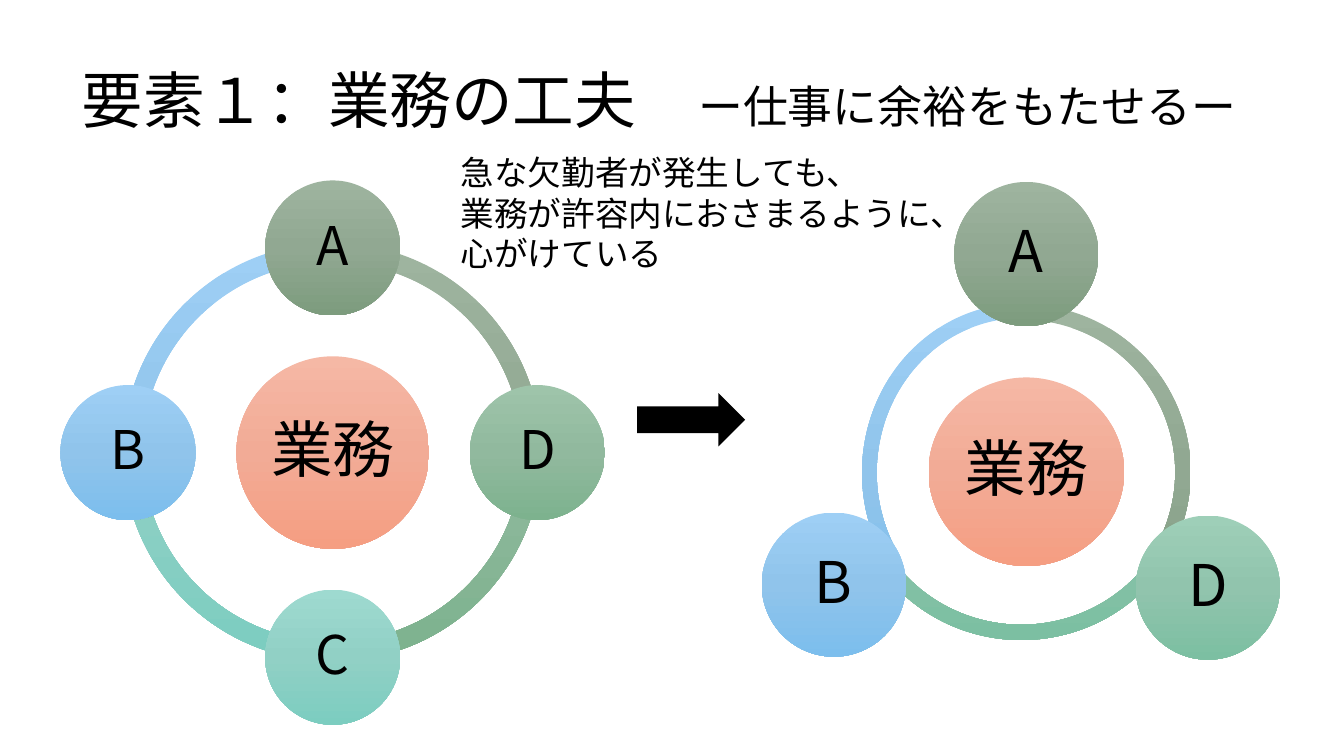
from copy import deepcopy
from math import cos, radians, sin

from lxml import etree
from pptx import Presentation
from pptx.dml.color import RGBColor
from pptx.enum.shapes import MSO_SHAPE as Shape
from pptx.enum.text import MSO_ANCHOR as Anchor, MSO_AUTO_SIZE as AutoSize, PP_ALIGN as Align
from pptx.oxml.ns import qn
from pptx.util import Inches, Pt

FONT = "Noto Sans CJK JP"

# Gradients from top to bottom
CORAL = ("F5B8A5", "F2AB96", "F59E82")
OLIVE = ("9EB49F", "91A892", "7D9C7E")
GREEN = ("9EC4AA", "91B99E", "7DB28E")
MINT = ("9ECFB8", "91C4AD", "7CBFA2")
TEAL = ("9EDAD0", "91D0C5", "7CCDC0")
BLUE = ("9ECFF5", "90C4EB", "7CBEED")


def color(hex_text):
    return RGBColor.from_string(hex_text)


def style_run(span, size, latin=FONT):
    span.font.size = Pt(size)
    span.font.name = latin
    span.font.color.rgb = color("000000")
    east_asian = etree.SubElement(span.font._element, qn("a:ea"))
    east_asian.set("typeface", FONT)


def add_plain_shape(page, kind, left, top, width, height):
    shape = page.shapes.add_shape(kind, Inches(left), Inches(top), Inches(width), Inches(height))
    shape.shadow.inherit = False
    shape.line.fill.background()
    return shape


def fill_gradient(shape, colors):
    shape.fill.gradient()
    shape.fill.gradient_angle = 270
    # A new gradient has two stops; the third is added here
    stop_list = shape._element.spPr.find(qn("a:gradFill")).find(qn("a:gsLst"))
    stop_list.append(deepcopy(stop_list[-1]))
    for stop, position, shade in zip(shape.fill.gradient_stops, (0, 0.5, 1), colors):
        stop.position = position
        stop.color.rgb = color(shade)


def add_arc(page, box, start, end, colors):
    """Ring segment running clockwise between two angles in degrees."""
    arc = add_plain_shape(page, Shape.BLOCK_ARC, *box)
    arc.adjustments[0] = start * 0.6
    arc.adjustments[1] = end * 0.6
    arc.adjustments[2] = 0.046
    fill_gradient(arc, colors)


def add_circle(page, label, center_x, center_y, width, height, size, colors):
    circle = add_plain_shape(page, Shape.OVAL, center_x - width / 2, center_y - height / 2,
                             width, height)
    fill_gradient(circle, colors)
    frame = circle.text_frame
    frame.margin_left = frame.margin_right = frame.margin_top = frame.margin_bottom = Inches(0.05)
    frame.word_wrap = False
    frame.vertical_anchor = Anchor.MIDDLE
    frame.text = label
    para = frame.paragraphs[0]
    para.alignment = Align.CENTER
    para.line_spacing = 0.9
    style_run(para.runs[0], size)


def add_title(page, parts):
    title = page.shapes.title
    title.left, title.top = Inches(0.71), Inches(0.26)
    title.width, title.height = Inches(11.98), Inches(1.53)
    frame = title.text_frame
    frame.auto_size = AutoSize.NONE
    frame.vertical_anchor = Anchor.MIDDLE
    para = frame.paragraphs[0]
    para.alignment = Align.LEFT
    para.line_spacing = 0.9
    for text, size in parts:
        span = para.add_run()
        span.text = text
        style_run(span, size, "Arial")


def add_note(page, lines):
    box = page.shapes.add_textbox(Inches(4.47), Inches(1.46), Inches(5.25), Inches(1.31))
    frame = box.text_frame
    frame.word_wrap = False
    frame.text = "\n".join(lines)
    for para in frame.paragraphs:
        style_run(para.runs[0], 24)


def add_four_person_ring(page):
    center_x, center_y, radius = 3.3, 4.49, 2.03
    members = [("A", 270, OLIVE), ("D", 0, GREEN), ("C", 90, TEAL), ("B", 180, BLUE)]
    for _, angle, colors in reversed(members):
        add_arc(page, (1.22, 2.41, 4.15, 4.15), angle, (angle + 90) % 360, colors)
    add_circle(page, "業務", center_x, center_y, 1.91, 1.91, 44, CORAL)
    for label, angle, colors in members:
        add_circle(page, label, center_x + radius * cos(radians(angle)),
                   center_y + radius * sin(radians(angle)), 1.34, 1.34, 38, colors)


def add_three_person_ring(page):
    add_arc(page, (8.55, 3.01, 3.17, 3.36), 148.95, 271.27, BLUE)
    add_arc(page, (8.43, 3.05, 3.4, 3.3), 31.58, 149.28, MINT)
    add_arc(page, (8.48, 3.02, 3.33, 3.33), 270.93, 31.91, OLIVE)
    add_circle(page, "業務", 10.18, 4.68, 1.94, 1.87, 44, CORAL)
    members = [("A", 10.18, 2.52, OLIVE), ("D", 11.98, 5.83, MINT), ("B", 8.27, 5.8, BLUE)]
    for label, center_x, center_y, colors in members:
        add_circle(page, label, center_x, center_y, 1.43, 1.43, 41, colors)


def main():
    deck = Presentation()
    deck.slide_width, deck.slide_height = Inches(13.33), Inches(7.5)
    page = deck.slides.add_slide(deck.slide_layouts[5])

    add_title(page, [("要素１：業務の工夫\u3000".replace("\u3000", "　"), 44),
                     ("ー仕事に余裕をもたせるー", 32)])

    # Work shared by four, then by three
    add_four_person_ring(page)
    add_three_person_ring(page)
    arrow = add_plain_shape(page, Shape.RIGHT_ARROW, 6.32, 3.9, 1.07, 0.53)
    arrow.fill.solid()
    arrow.fill.fore_color.rgb = color("000000")

    add_note(page, ["急な欠勤者が発生しても、", "業務が許容内におさまるように、", "心がけている"])
    deck.save("out.pptx")


if __name__ == "__main__":
    main()
